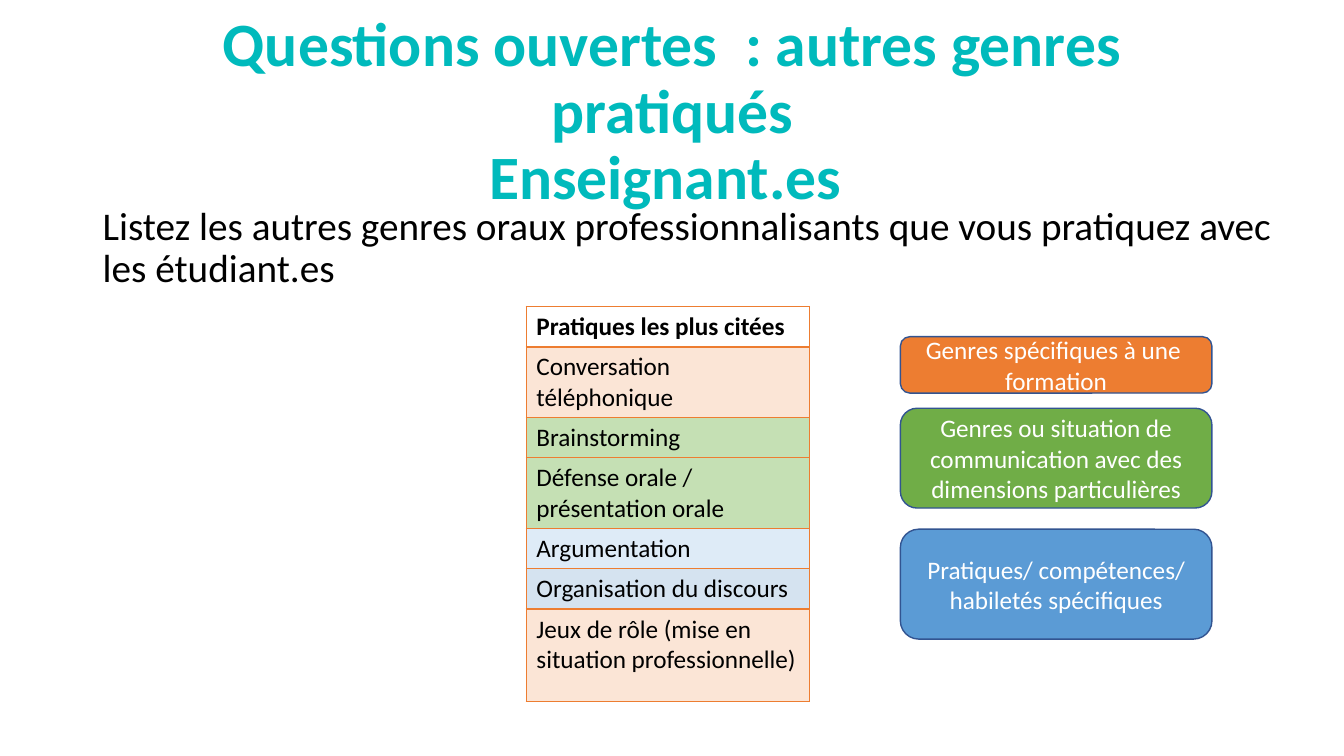
"""Build the slide on other oral genres practised by teachers."""
from lxml import etree
from pptx import Presentation
from pptx import util as u
from pptx.dml.color import RGBColor
from pptx.enum import shapes, text
from pptx.oxml import ns

HUES = {
    "title": "00BABC", "black": "000000", "white": "FFFFFF",
    "orange": "ED7D31", "green": "70AD47", "blue": "5B9BD5", "edge": "325491",
    "peach": "FBE5D6", "mint": "C5E0B4", "sky": "DEEBF7", "steel": "D5E3F0",
}


def write(frame, words, size, hue, bold=False, align=text.PP_ALIGN.LEFT):
    frame.word_wrap = True
    para = frame.paragraphs[0]
    para.text = words
    para.alignment = align
    font = para.font
    font.name, font.size, font.bold = "Calibri", u.Pt(size), bold
    font.color.rgb = RGBColor.from_string(HUES[hue])
    return para


def border(cell, widths):
    props = cell._tc.get_or_add_tcPr()
    for spot, (side, width) in enumerate(widths.items()):
        line = etree.Element(ns.qn(f"a:ln{side}"), w=str(u.Pt(width)))
        fill = etree.SubElement(line, ns.qn("a:solidFill"))
        etree.SubElement(fill, ns.qn("a:srgbClr"), val=HUES["orange"])
        props.insert(spot, line)


deck = Presentation()
deck.slide_width, deck.slide_height = u.Inches(13.33), u.Inches(7.5)
slide = deck.slides.add_slide(deck.slide_layouts[6])

title = slide.shapes.add_textbox(u.Inches(0.92), u.Inches(0.4), u.Inches(11.5), u.Inches(1.45))
title.text_frame.vertical_anchor = text.MSO_ANCHOR.MIDDLE
para = write(title.text_frame, "Questions ouvertes  : autres genres pratiqués\vEnseignant.es ",
             44, "title", True, text.PP_ALIGN.CENTER)
para.line_spacing = 0.9

body = slide.shapes.add_textbox(u.Inches(0.92), u.Inches(2), u.Inches(12.11), u.Inches(5.32))
para = write(body.text_frame, "Listez les autres genres oraux professionnalisants que vous "
             "pratiquez avec les étudiant.es", 28, "black")
para.line_spacing = 0.9

rows = [
    ("Pratiques les plus citées", "white", 0.37),
    ("Conversation téléphonique", "peach", 0.65),
    ("Brainstorming", "mint", 0.37),
    ("Défense orale / présentation orale", "mint", 0.65),
    ("Argumentation", "sky", 0.37),
    ("Organisation du discours", "steel", 0.37),
    ("Jeux de rôle (mise en situation professionnelle)", "peach", 0.92),
]
table = slide.shapes.add_table(len(rows), 1, u.Inches(5.22), u.Inches(3.04),
                               u.Inches(2.81), u.Inches(3.7)).table
table.first_row = table.horz_banding = False
for i, (words, hue, height) in enumerate(rows):
    table.rows[i].height = u.Inches(height)
    cell = table.cell(i, 0)
    cell.fill.solid()
    cell.fill.fore_color.rgb = RGBColor.from_string(HUES[hue])
    write(cell.text_frame, words, 18, "black", i == 0)
    border(cell, {"L": 1, "R": 1, "T": 2 if i == 1 else 1, "B": 2 if i == 0 else 1})

legend = [
    ("Genres spécifiques à une  formation", "orange", 3.34, 0.56),
    ("Genres ou situation de communication avec des dimensions particulières",
     "green", 4.05, 0.99),
    ("Pratiques/ compétences/ habiletés spécifiques", "blue", 5.25, 1.09),
]
for words, hue, top, height in legend:
    box = slide.shapes.add_shape(shapes.MSO_SHAPE.ROUNDED_RECTANGLE, u.Inches(8.93),
                                 u.Inches(top), u.Inches(3.09), u.Inches(height))
    box.shadow.inherit = False
    box.fill.solid()
    box.fill.fore_color.rgb = RGBColor.from_string(HUES[hue])
    box.line.color.rgb = RGBColor.from_string(HUES["edge"])
    box.line.width = u.Pt(1)
    box.text_frame.vertical_anchor = text.MSO_ANCHOR.MIDDLE
    write(box.text_frame, words, 18, "white", align=text.PP_ALIGN.CENTER)

deck.save("out.pptx")
